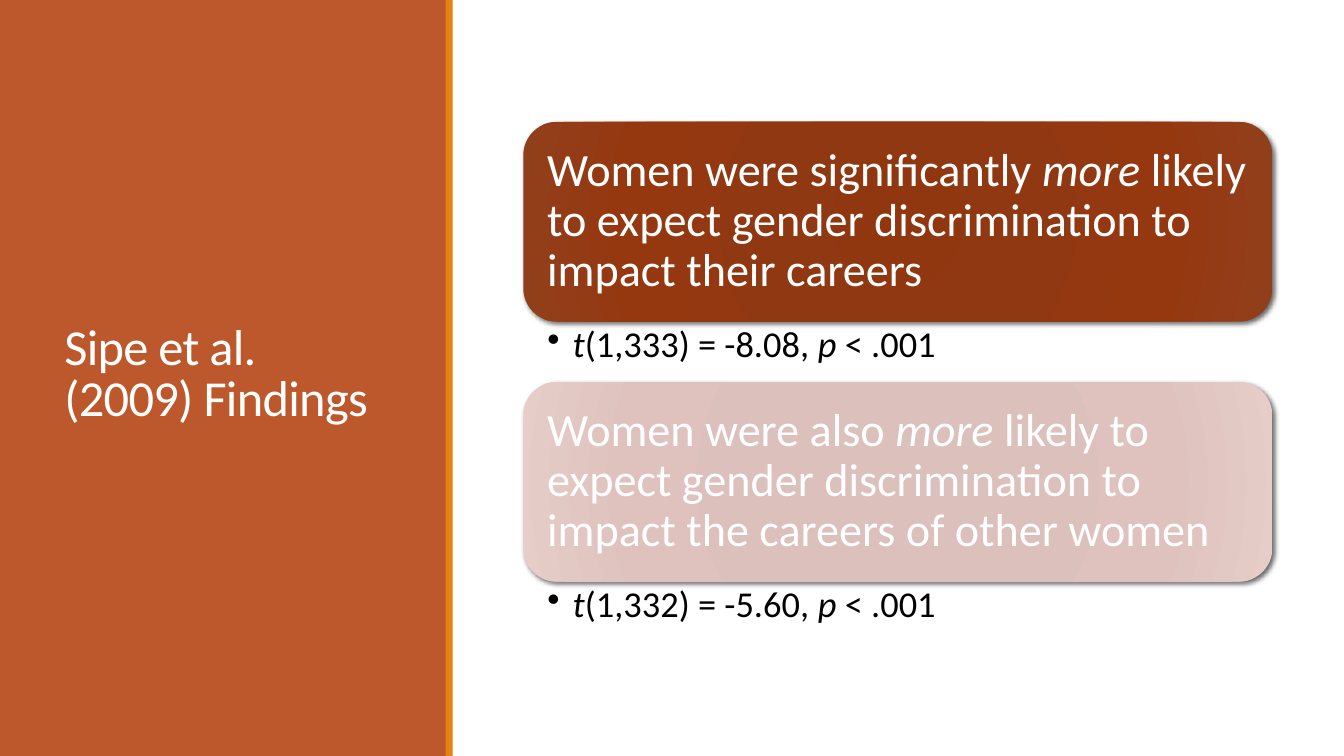
from dataclasses import dataclass

from lxml import etree
from pptx import Presentation
from pptx.dml.color import RGBColor
from pptx.enum.shapes import MSO_SHAPE
from pptx.enum.text import MSO_ANCHOR, PP_ALIGN
from pptx.oxml import parse_xml
from pptx.oxml.ns import nsdecls, qn
from pptx.util import Inches, Pt

RECTANGLE = MSO_SHAPE.RECTANGLE
ROUNDED = MSO_SHAPE.ROUNDED_RECTANGLE
TOP, MIDDLE = MSO_ANCHOR.TOP, MSO_ANCHOR.MIDDLE
LEFT = PP_ALIGN.LEFT


@dataclass(frozen=True)
class Theme:
    font: str = "Calibri"
    title_size: int = 36
    card_size: int = 33
    detail_size: int = 26
    panel: str = "BD582C"
    accent: str = "E48312"
    light: str = "FFFFFF"
    dark: str = "000000"
    strong_card: tuple = ("91370F", "903812", "953810", "913F1B")
    pale_card: tuple = ("D9BEB8", "DBC0BB", "DFC2BD", "E6CDC8")
    stops: tuple = (0, 34, 70, 100)


THEME = Theme()

# Asterisks enclose italic words
FINDINGS = [
    ("Women were significantly *more* likely to expect gender discrimination "
     "to impact their careers",
     "*t*(1,333) = -8.08, *p *< .001", THEME.strong_card),
    ("Women were also *more* likely to expect gender discrimination "
     "to impact the careers of other women",
     "*t*(1,332) = -5.60, *p *< .001", THEME.pale_card),
]


def write_text(box, text, *, size, color, anchor=TOP, line_spacing=0.9,
               insets=(0.1, 0.05, 0.1, 0.05), tracking=None, bullet=False):
    """Fill a shape with one paragraph, with *italic* words marked."""
    frame = box.text_frame
    frame.word_wrap = True
    frame.vertical_anchor = anchor
    (frame.margin_left, frame.margin_top,
     frame.margin_right, frame.margin_bottom) = map(Inches, insets)
    para = frame.paragraphs[0]
    para.alignment = LEFT
    para.line_spacing = line_spacing
    if bullet:
        properties = para._p.get_or_add_pPr()
        properties.set("marL", str(Inches(0.25)))
        properties.set("indent", str(Inches(-0.25)))
        etree.SubElement(properties, qn("a:buChar")).set("char", "•")
    for index, part in enumerate(text.split("*")):
        if not part:
            continue
        span = para.add_run()
        span.text = part
        span.font.name = THEME.font
        span.font.size = Pt(size)
        span.font.italic = index % 2 == 1
        span.font.color.rgb = RGBColor.from_string(color)
        if tracking is not None:
            span._r.get_or_add_rPr().set("spc", str(int(tracking * 100)))


def add_block(page, kind, left, top, width, height, color):
    """Add a flat shape without outline or shadow."""
    block = page.shapes.add_shape(
        kind, Inches(left), Inches(top), Inches(width), Inches(height))
    block.shadow.inherit = False
    block.fill.solid()
    block.fill.fore_color.rgb = RGBColor.from_string(color)
    block.line.fill.background()
    return block


def add_text_box(page, left, top, width, height, text, **text_format):
    box = page.shapes.add_textbox(
        Inches(left), Inches(top), Inches(width), Inches(height))
    write_text(box, text, **text_format)


def add_glow(block, colors):
    """Give a block a radial gradient and a soft shadow."""
    stops = "".join(
        f'<a:gs pos="{stop * 1000}"><a:srgbClr val="{color}"/></a:gs>'
        for stop, color in zip(THEME.stops, colors))
    gradient = parse_xml(
        f'<a:gradFill {nsdecls("a")} rotWithShape="1"><a:gsLst>{stops}</a:gsLst>'
        '<a:path path="circle"><a:fillToRect l="100000" t="100000" '
        'r="100000" b="100000"/></a:path></a:gradFill>')
    shadow = parse_xml(
        f'<a:outerShdw {nsdecls("a")} blurRad="{Pt(3.5)}" dist="{Pt(2)}" '
        f'dir="{45 * 60000}" algn="ctr" rotWithShape="0">'
        f'<a:srgbClr val="{THEME.dark}"><a:alpha val="60000"/></a:srgbClr>'
        '</a:outerShdw>')
    properties = block._element.spPr
    properties.replace(properties.find(qn("a:solidFill")), gradient)
    properties.find(qn("a:effectLst")).append(shadow)


def add_title_panel(page, left, top, width, height):
    """Coloured side panel with the title and an accent stripe."""
    add_block(page, RECTANGLE, left, top, width, height, THEME.panel)
    add_text_box(page, left + 0.54, top + 0.57, width - 1.06, height - 1.19,
                 "Sipe et al. (2009) Findings", size=THEME.title_size,
                 color=THEME.light, anchor=MIDDLE, line_spacing=0.85,
                 tracking=-0.5)
    add_block(page, RECTANGLE, left + width - 0.01, top, 0.07, height,
              THEME.accent)


def add_findings(page, left, top, width, height):
    """Stack of cards, each followed by its test statistic."""
    pitch = height / len(FINDINGS)
    detail_height = 0.6
    card_height = pitch - detail_height
    for index, (finding, statistic, colors) in enumerate(FINDINGS):
        card_top = top + index * pitch
        card = add_block(page, ROUNDED, left, card_top, width, card_height,
                         colors[0])
        add_glow(card, colors)
        write_text(card, finding, size=THEME.card_size, color=THEME.light,
                   anchor=MIDDLE, insets=(0.14,) * 4)
        add_text_box(page, left, card_top + card_height, width, detail_height,
                     statistic, size=THEME.detail_size, color=THEME.dark,
                     insets=(0.24, 0.05, 0.26, 0.05), bullet=True)


def main():
    deck = Presentation()
    deck.slide_width, deck.slide_height = Inches(13.33), Inches(7.5)
    page = deck.slides.add_slide(deck.slide_layouts[6])
    add_title_panel(page, 0, 0, 4.43, 7.5)
    add_findings(page, 5.19, 1.21, 7.43, 5.16)
    deck.save("out.pptx")


if __name__ == "__main__":
    main()
